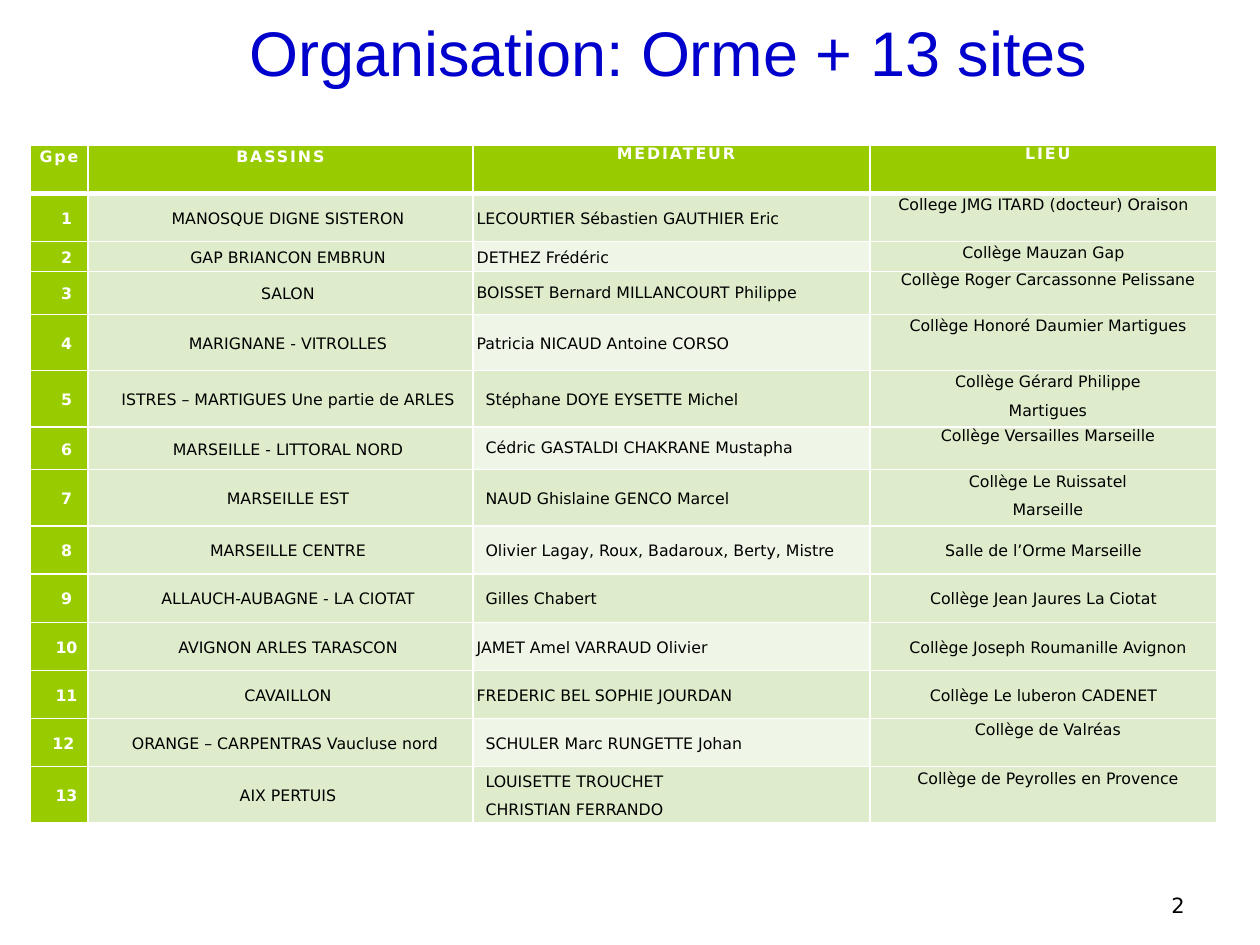
from lxml.etree import SubElement
from pptx import Presentation
from pptx.dml.color import RGBColor
from pptx.enum.text import MSO_ANCHOR, PP_ALIGN
from pptx.oxml.ns import qn
from pptx.util import Pt

GREEN, PALE, PALER = "99CC00", "DEECCC", "EFF6E7"
WHITE, BLACK, BLUE = "FFFFFF", "000000", "0000CC"


def add_run(p, text, size, color, font="DejaVu Sans", bold=False):
    r = p.add_run()
    r.text = text
    r.font.name = font
    r.font.size = Pt(size)
    r.font.bold = bold
    r.font.color.rgb = RGBColor.from_string(color)
    return r


def add_border(cell, side, width):
    ln = SubElement(cell._tc.get_or_add_tcPr(), qn(f"a:{side}"), w=str(Pt(width)))
    SubElement(SubElement(ln, qn("a:solidFill")), qn("a:srgbClr"), val=WHITE)


prs = Presentation()
prs.slide_width, prs.slide_height = Pt(720), Pt(540)
s = prs.slides.add_slide(prs.slide_layouts[6])

# Title and page number
for text, box, align, size, color, font in [
    ("Organisation: Orme + 13 sites", (108, 10, 548, 44.6),
     PP_ALIGN.CENTER, 36, BLUE, "Arial"),
    ("2", (516.2, 491.8, 167.8, 36), PP_ALIGN.RIGHT, 12, BLACK, "DejaVu Sans"),
]:
    tf = s.shapes.add_textbox(*map(Pt, box)).text_frame
    tf.word_wrap = True
    tf.vertical_anchor = MSO_ANCHOR.BOTTOM
    p = tf.paragraphs[0]
    p.alignment = align
    add_run(p, text, size, color, font)

# Table: one tuple per row, "\n" separates paragraphs
rows = [
    ("Gpe", "BASSINS", "MEDIATEUR", "LIEU"),
    ("1", "MANOSQUE DIGNE SISTERON", "LECOURTIER Sébastien GAUTHIER Eric",
     "College JMG ITARD (docteur) Oraison"),
    ("2", "GAP BRIANCON EMBRUN", "DETHEZ Frédéric", "Collège Mauzan Gap"),
    ("3", "SALON", "BOISSET Bernard MILLANCOURT Philippe",
     "Collège Roger Carcassonne Pelissane"),
    ("4", "MARIGNANE - VITROLLES", "Patricia NICAUD Antoine CORSO",
     "Collège Honoré Daumier Martigues"),
    ("5", "ISTRES – MARTIGUES Une partie de ARLES", "Stéphane DOYE EYSETTE Michel",
     "Collège Gérard Philippe\nMartigues"),
    ("6", "MARSEILLE - LITTORAL NORD", "Cédric GASTALDI CHAKRANE Mustapha",
     "Collège Versailles Marseille"),
    ("7", "MARSEILLE EST", "NAUD Ghislaine GENCO Marcel",
     "Collège Le Ruissatel\nMarseille"),
    ("8", "MARSEILLE CENTRE", "Olivier Lagay, Roux, Badaroux, Berty, Mistre",
     "Salle de l’Orme Marseille"),
    ("9", "ALLAUCH-AUBAGNE - LA CIOTAT", "Gilles Chabert",
     "Collège Jean Jaures La Ciotat"),
    ("10", "AVIGNON ARLES TARASCON", "JAMET Amel VARRAUD Olivier",
     "Collège Joseph Roumanille Avignon"),
    ("11", "CAVAILLON", "FREDERIC BEL SOPHIE JOURDAN", "Collège Le luberon CADENET"),
    ("12", "ORANGE – CARPENTRAS Vaucluse nord", "SCHULER Marc RUNGETTE Johan",
     "Collège de Valréas"),
    ("13", "AIX PERTUIS", "LOUISETTE TROUCHET\nCHRISTIAN FERRANDO",
     "Collège de Peyrolles en Provence"),
]
col_widths = [33, 220, 227, 198]
row_heights = {2: 17.1, 3: 24.5, 6: 24.5, 4: 32.2, 5: 32.2, 7: 32.2, 13: 32.2}
hanging_rows = {0: {12}, 1: {12}, 2: {0, 5, 6, 7, 8, 9, 12, 13},
                3: {0, 3, 4, 5, 6, 7, 10, 12, 13}}
tight_rows = {0, 3, 6}
middle_place_rows = {8, 9, 10, 11}

table = s.shapes.add_table(len(rows), len(col_widths), Pt(17.2), Pt(83),
                           Pt(sum(col_widths)), Pt(388)).table
table.horz_banding = False
for col, width in zip(table.columns, col_widths):
    col.width = Pt(width)

for i, row in enumerate(rows):
    table.rows[i].height = Pt(row_heights.get(i, 27.5))
    header = i == 0
    for j, text in enumerate(row):
        cell = table.cell(i, j)
        cell.margin_left = cell.margin_right = Pt(2.2)
        cell.margin_top = cell.margin_bottom = 0
        top = header or (j == 3 and i not in middle_place_rows)
        cell.vertical_anchor = MSO_ANCHOR.TOP if top else MSO_ANCHOR.MIDDLE

        for side in ("lnL", "lnR", "lnT", "lnB"):
            thick = (i, side) in ((0, "lnB"), (1, "lnT"))
            add_border(cell, side, 3 if thick else 1)
        strong = header or j == 0
        fill = GREEN if strong else PALER if j == 2 and i % 2 == 0 else PALE
        cell.fill.solid()
        cell.fill.fore_color.rgb = RGBColor.from_string(fill)

        tf = cell.text_frame
        for k, line in enumerate(text.split("\n")):
            p = tf.add_paragraph() if k else tf.paragraphs[0]
            p.alignment = PP_ALIGN.LEFT if j == 2 and not header else PP_ALIGN.CENTER
            p.line_spacing = Pt(10.5) if j > 1 and i in tight_rows else 1.15
            p.space_before = Pt(2 if k else 0)
            p.space_after = Pt(6 if header else 2)
            pPr = p._p.get_or_add_pPr()
            if i in hanging_rows[j]:
                pPr.set("marL", str(Pt(5.8)))
                pPr.set("indent", str(Pt(-0.7)))
            elif j < 2 and not header:
                pPr.set("marL", str(Pt(8.6)))
            r = add_run(p, line, 9, WHITE if strong else BLACK, bold=strong)
            if header:
                r.font._element.set("spc", "110")

prs.save("out.pptx")
